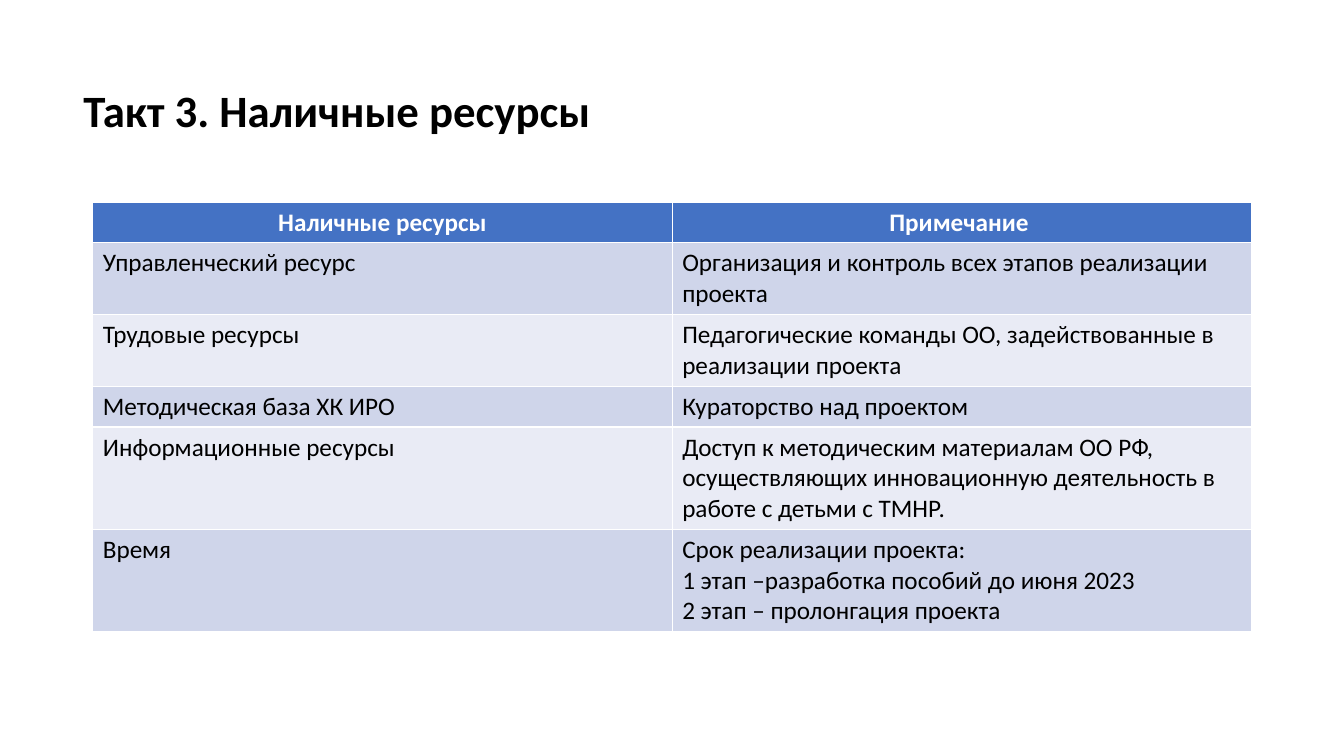
from pptx import Presentation
from pptx.dml.color import RGBColor
from pptx.enum.text import MSO_ANCHOR, PP_ALIGN
from pptx.util import Cm, Pt

HEADING = "Такт 3. Наличные ресурсы"
COLUMN_HEADS = ("Наличные ресурсы", "Примечание ")
RESOURCES = [
    ("Управленческий ресурс", "Организация и контроль всех этапов реализации проекта", 2),
    ("Трудовые ресурсы", "Педагогические команды ОО, задействованные в реализации проекта", 2),
    ("Методическая база ХК ИРО", "Кураторство над проектом", 1),
    ("Информационные ресурсы",
     "Доступ к методическим материалам ОО РФ, осуществляющих инновационную "
     "деятельность в работе с детьми с ТМНР.", 3),
    ("Время",
     "Срок реализации проекта:\n1 этап –разработка пособий до июня 2023\n"
     "2 этап – пролонгация проекта", 3),
]
HEAD_FILL = "4472C4"
BAND_FILLS = ("CFD5EA", "E9EBF5")
LINE_HEIGHT, CELL_PADDING = 0.77, 0.26


def color(value):
    return RGBColor.from_string(value)


def write(frame, text, size=18, ink="000000", bold=False, align=PP_ALIGN.LEFT, spacing=None):
    frame.text = text
    for paragraph in frame.paragraphs:
        paragraph.alignment = align
        paragraph.line_spacing = spacing
        for run in paragraph.runs:
            run.font.name = "Calibri"
            run.font.size = Pt(size)
            run.font.bold = bold
            run.font.color.rgb = color(ink)


def row_height(lines):
    return Cm(round(CELL_PADDING + LINE_HEIGHT * lines, 2))


def fill_row(row, texts, background, lines, **style):
    row.height = row_height(lines)
    for cell, text in zip(row.cells, texts):
        cell.fill.solid()
        cell.fill.fore_color.rgb = color(background)
        write(cell.text_frame, text, **style)


deck = Presentation()
deck.slide_width, deck.slide_height = Cm(33.87), Cm(19.05)
slide = deck.slides.add_slide(deck.slide_layouts[5])

heading = slide.shapes.title
heading.left, heading.top, heading.width, heading.height = Cm(1.85), Cm(1), Cm(26.4), Cm(3.68)
heading.text_frame.vertical_anchor = MSO_ANCHOR.MIDDLE
write(heading.text_frame, HEADING, size=32, bold=True, spacing=0.9)

line_counts = [1] + [lines for _, _, lines in RESOURCES]
resources = slide.shapes.add_table(
    len(line_counts), len(COLUMN_HEADS), Cm(2.34), Cm(5.09), Cm(29.2),
    sum(row_height(lines) for lines in line_counts)).table

fill_row(resources.rows[0], COLUMN_HEADS, HEAD_FILL, 1,
         ink="FFFFFF", bold=True, align=PP_ALIGN.CENTER)
for index, (resource, note, lines) in enumerate(RESOURCES):
    fill_row(resources.rows[index + 1], (resource, note), BAND_FILLS[index % 2], lines)

deck.save("out.pptx")
